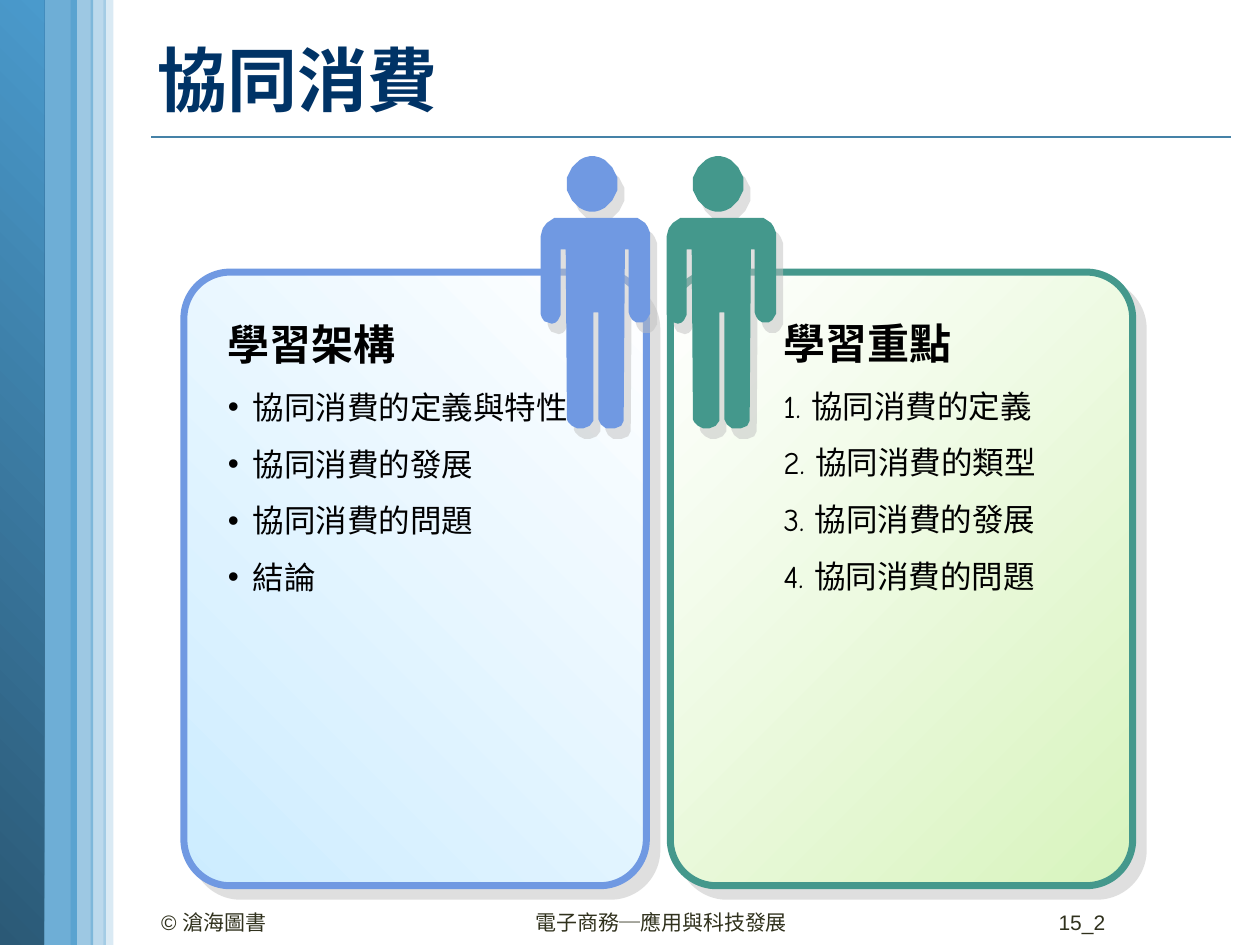
"""Build the collaborative consumption opening slide."""
from dataclasses import dataclass, field
from math import cos, pi, sin
from typing import Any, NamedTuple

from lxml import etree
from pptx import Presentation, util as u
from pptx.dml.color import RGBColor
from pptx.enum import shapes, text
from pptx.oxml import ns

PX = 9144


class Box(NamedTuple):
    x: int
    y: int
    w: int
    h: int

    def emu(self) -> list[int]:
        return [v * PX for v in self]


@dataclass(frozen=True)
class Theme:
    sky: str = "4A9ACC"
    deep: str = "2B5976"
    rule: str = "4582A7"
    navy: str = "003366"
    ink: str = "000000"
    foot: str = "30311D"
    shade: str = "C0C0C0"
    blue: str = "7099E2"
    green: str = "44988C"
    ice: str = "CCECFF"
    lime: str = "D8F4BE"
    white: str = "FFFFFF"
    hand: str = "Comic Neue"
    sans: str = "Arial"
    title: int = 40
    head: int = 24
    body: int = 18
    small: int = 12


T = Theme()


@dataclass(frozen=True)
class Para:
    words: str
    size: int
    color: str = T.ink
    face: str = T.hand
    bold: bool = False
    bullet: str = ""
    hang: int = 0
    fmt: dict[str, Any] = field(default_factory=dict)


@dataclass(frozen=True)
class Bar:
    box: Box
    alpha: int


@dataclass(frozen=True)
class Panel:
    box: Box
    grad: tuple[str, str]
    angle: int
    edge: str
    note: Box
    head: str
    items: tuple[str, ...]
    bullet: str
    hang: int
    man: int
    front: bool


BARS = [
    Bar(Box(30, 0, 31, 753), 80),
    Bar(Box(82, -2, 8, 752), 20),
    Bar(Box(56, 0, 18, 751), 54),
    Bar(Box(72, 0, 12, 752), 37),
]
PANELS = [
    Panel(Box(146, 216, 367, 487), (T.ice, T.white), 45, T.blue,
          Box(171, 228, 310, 252), "學習架構",
          ("協同消費的定義與特性", "協同消費的發展", "協同消費的問題", "結論"),
          "•", 20, 429, False),
    Panel(Box(532, 216, 367, 487), (T.white, T.lime), 315, T.green,
          Box(612, 227, 283, 257), "學習重點",
          ("1. 協同消費的定義", "2. 協同消費的類型", "3. 協同消費的發展", "4. 協同消費的問題"),
          "", 38, 529, True),
]
FOOT = [
    (Box(118, 717, 233, 26), "© 滄海圖書", text.PP_ALIGN.LEFT),
    (Box(415, 717, 236, 26), "電子商務─應用與科技發展", text.PP_ALIGN.LEFT),
    (Box(815, 717, 72, 26), "15_2", text.PP_ALIGN.RIGHT),
]
HEAD = [(41 + 20 * cos(k * pi / 15), 22 + 22 * sin(k * pi / 15)) for k in range(30)]
BODY = [
    (14, 49), (11, 49), (8, 51), (5, 53), (2, 57), (1, 60), (0, 64), (0, 125),
    (1, 128), (3, 131), (6, 132), (9, 133), (12, 132), (14, 130), (16, 126),
    (16, 74), (20, 74), (21, 209), (22, 211), (25, 214), (29, 216), (34, 216),
    (39, 214), (42, 210), (42, 124), (46, 124), (46, 209), (48, 213), (52, 216),
    (59, 216), (64, 214), (66, 210), (67, 74), (70, 74), (70, 124), (71, 127),
    (73, 130), (76, 132), (81, 132), (84, 130), (87, 125), (87, 61), (85, 56),
    (83, 53), (80, 51), (77, 49), (73, 49),
]


def put(obj: Any, vals: dict[str, Any]) -> None:
    for key, val in vals.items():
        setattr(obj, key, val)


def add(node: Any, tag: str, **attrs: Any) -> Any:
    return etree.SubElement(node, ns.qn(tag), {k: str(v) for k, v in attrs.items()})


def solid(shape: Any, color: str, alpha: int = 100) -> None:
    shape.fill.solid()
    shape.fill.fore_color.rgb = RGBColor.from_string(color)
    if alpha < 100:
        node = shape._element.spPr.find(".//" + ns.qn("a:srgbClr"))
        add(node, "a:alpha", val=alpha * 1000)


def blend(shape: Any, pair: tuple[str, str], angle: int) -> None:
    shape.fill.gradient()
    shape.fill.gradient_angle = angle
    for stop, color in zip(shape.fill.gradient_stops, pair):
        stop.color.rgb = RGBColor.from_string(color)


def shadow(shape: Any, dist: float, angle: int) -> None:
    shape.shadow.inherit = False
    node = shape._element.spPr.find(ns.qn("a:effectLst"))
    node = add(node, "a:outerShdw", blurRad=0, dist=int(u.Pt(dist)),
               dir=angle * 60000, algn="ctr", rotWithShape=0)
    add(add(node, "a:srgbClr", val=T.shade), "a:alpha", val=50000)


def shape(tree: Any, kind: Any, box: Box) -> Any:
    form = tree.add_shape(kind, *box.emu())
    form.shadow.inherit = False
    form.line.fill.background()
    return form


def write(tree: Any, box: Box, paras: list[Para], **fmt: Any) -> None:
    frame = tree.add_textbox(*box.emu()).text_frame
    put(frame, {"word_wrap": True, **fmt})
    for k, item in enumerate(paras):
        para = frame.add_paragraph() if k else frame.paragraphs[0]
        put(para, item.fmt)
        prop = para._p.get_or_add_pPr()
        if item.hang:
            prop.set("marL", str(item.hang * PX))
            prop.set("indent", str(-item.hang * PX))
        if item.bullet:
            add(prop, "a:buFont", typeface=T.sans)
            add(prop, "a:buChar", char=item.bullet)
        run = para.add_run()
        run.text = item.words
        put(run.font, {"size": u.Pt(item.size), "name": item.face, "bold": item.bold})
        run.font.color.rgb = RGBColor.from_string(item.color)


def person(tree: Any, left: int, color: str) -> None:
    for part in (HEAD, BODY):
        pts = [(left + x, 124 + y) for x, y in part]
        pen = tree.build_freeform(*pts[0], scale=PX)
        form = pen.add_line_segments(pts[1:], close=True).convert_to_shape()
        solid(form, color)
        form.line.fill.background()
        shadow(form, 7.2, 56)


def panel(tree: Any, item: Panel) -> None:
    form = shape(tree, shapes.MSO_SHAPE.ROUNDED_RECTANGLE, item.box)
    form.adjustments[0] = 0.1
    blend(form, item.grad, item.angle)
    form.line.color.rgb = RGBColor.from_string(item.edge)
    form.line.width = u.Pt(4)
    shadow(form, 8.5, 45)
    if not item.front:
        person(tree, item.man, item.edge)
    fmt = {"line_spacing": 1.5}
    paras = [Para(item.head, T.head, bold=True, fmt=fmt)]
    paras += [Para(words, T.body, bullet=item.bullet, hang=item.hang, fmt=fmt)
              for words in item.items]
    write(tree, item.note, paras, auto_size=text.MSO_AUTO_SIZE.SHAPE_TO_FIT_TEXT)
    if item.front:
        person(tree, item.man, item.edge)


def side(tree: Any) -> None:
    ends = [v * PX for v in (120, 109, 977, 109)]
    rule = tree.add_connector(shapes.MSO_CONNECTOR.STRAIGHT, *ends)
    rule.line.color.rgb = RGBColor.from_string(T.rule)
    rule.line.width = u.Pt(1)
    add(rule._element.spPr, "a:effectLst")
    for k, bar in enumerate(BARS):
        solid(shape(tree, shapes.MSO_SHAPE.RECTANGLE, bar.box), T.sky, bar.alpha)
        if k == 0:
            edge = shape(tree, shapes.MSO_SHAPE.RECTANGLE, Box(-1, 0, 36, 750))
            blend(edge, (T.deep, T.sky), 45)


def main() -> None:
    deck = Presentation()
    put(deck, {"slide_width": 1000 * PX, "slide_height": 750 * PX})
    tree = deck.slides.add_slide(deck.slide_layouts[6]).shapes
    side(tree)
    write(tree, Box(115, 7, 870, 111), [Para("協同消費", T.title, T.navy, bold=True)],
          vertical_anchor=text.MSO_ANCHOR.MIDDLE)
    for item in PANELS:
        panel(tree, item)
    for box, words, side_to in FOOT:
        write(tree, box, [Para(words, T.small, T.foot, T.sans, fmt={"alignment": side_to})])
    deck.save("out.pptx")


if __name__ == "__main__":
    main()
